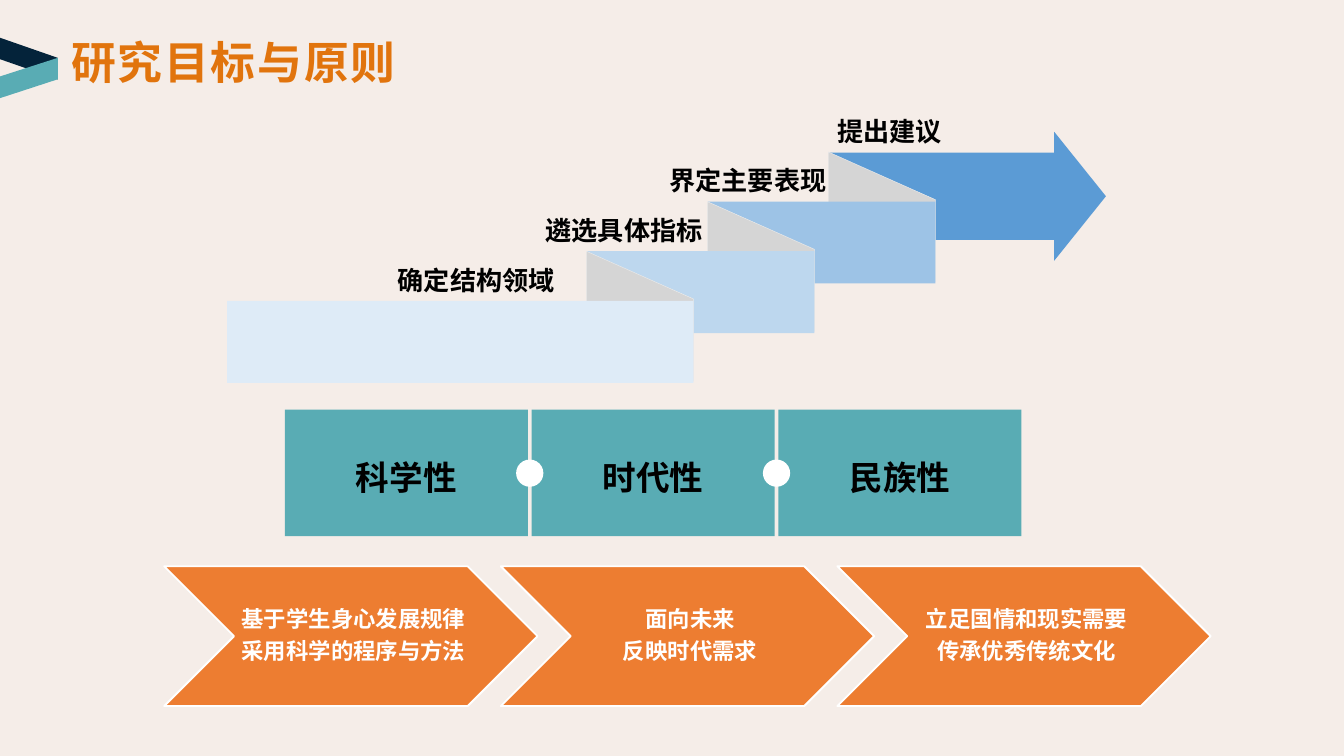
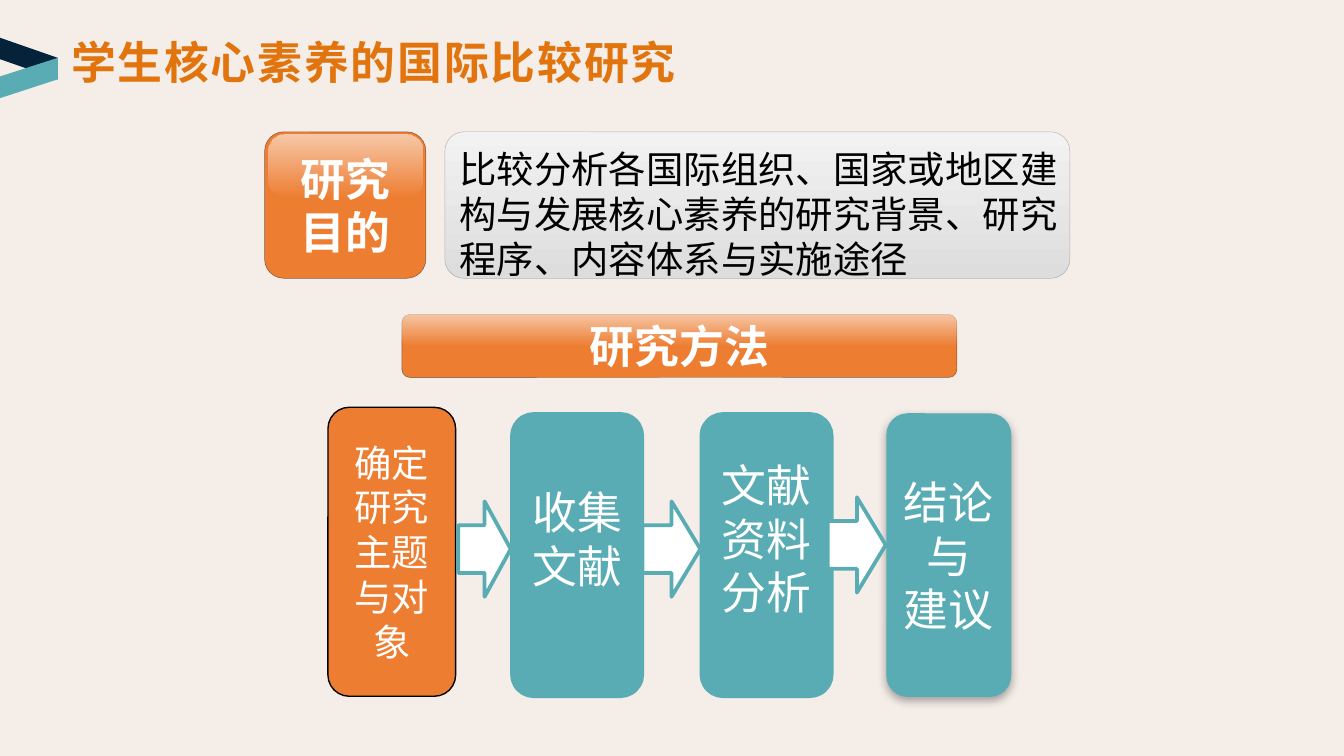
from lxml import etree
from pptx import Presentation
from pptx.dml.color import RGBColor
from pptx.enum.shapes import MSO_SHAPE as Kind
from pptx.enum.text import MSO_ANCHOR as Anchor, MSO_AUTO_SIZE as AutoSize, PP_ALIGN as Align
from pptx.oxml import parse_xml
from pptx.oxml.ns import nsdecls, qn
from pptx.util import Pt

CREAM = RGBColor(0xF5, 0xED, 0xE8)
WHITE = RGBColor(0xFF, 0xFF, 0xFF)
BLACK = RGBColor(0, 0, 0)
INK = RGBColor(0x1C, 0x1C, 0x1C)
NAVY = RGBColor(0x04, 0x23, 0x3A)
TEAL = RGBColor(0x59, 0xAC, 0xB4)
ORANGE = RGBColor(0xED, 0x7D, 0x31)
TITLE_ORANGE = RGBColor(0xE1, 0x74, 0x0D)
FOLD_GREY = RGBColor(0xD5, 0xD5, 0xD5)
FOLD_EDGE = RGBColor(0xEA, 0xEA, 0xEA)
PANEL_TOP = RGBColor(0xF2, 0xF2, 0xF2)
PANEL_BOTTOM = RGBColor(0xDD, 0xDD, 0xDD)
PANEL_EDGE = RGBColor(0x96, 0x96, 0x96)
ARROW_BLUE = RGBColor(0x5B, 0x9B, 0xD5)
STAIR_BLUES = [RGBColor(0x9D, 0xC3, 0xE6), RGBColor(0xBD, 0xD7, 0xEE), RGBColor(0xDE, 0xEB, 0xF7)]

FONT = "Noto Sans CJK SC"
LINE_HEIGHT = 1.2
INSETS = (7.2, 3.6, 7.2, 3.6)

# Title ribbon: colour and corners
RIBBON = [
    (NAVY, [(31, 42.5), (31, 31), (0, 20.2), (0, 31.7)]),
    (TEAL, [(31, 31), (31, 42.5), (0, 52.6), (0, 41)]),
]

# Goals page
GOALS_TITLE = "研究目标与原则"
STAIR_LABELS = [("提出建议", 448.6), ("界定主要表现", 358.6), ("遴选具体指标", 292.3), ("确定结构领域", 213.1)]
STAIR_WIDTHS = [121.7, 121.7, 249.8]
STAIR_DX, STAIR_DY = -64.8, 26.6
FOLD = [(0, 0), (57.4, 25.6), (57.4, 69.6), (0, 48.2)]
PRINCIPLES = [
    ("科学性", ["基于学生身心发展规律", "采用科学的程序与方法"]),
    ("时代性", ["面向未来", "反映时代需求"]),
    ("民族性", ["立足国情和现实需要", "传承优秀传统文化"]),
]

# Comparison page
COMPARE_TITLE = "学生核心素养的国际比较研究"
PURPOSE = ["研究", "目的"]
PURPOSE_TEXT = ["比较分析各国际组织、国家或地区建构与发展核心素养的研究背景、研究程序、内容体系与实施途径"]
METHOD = ["研究方法"]
# lines, frame, text size, fill, line, line width, bottom inset
STEPS = [
    (["确定", "研究", "主题", "与对", "象"], (175.7, 218.2, 68.4, 154.8), 20, ORANGE, BLACK, 0.75, 3.6),
    (["收集", "文献"], (274.3, 221.8, 69.8, 151.2), 24, TEAL, TEAL, 2, 21.6),
    (["文献", "资料", "分析"], (375.8, 221.8, 69.8, 151.2), 24, TEAL, TEAL, 2, 21.6),
    (["结论", "与", "建议"], (475.2, 221.8, 66.2, 151.2), 24, TEAL, TEAL, 0.75, 3.6),
]
STEP_ARROWS = [(245.5, 268.6, 28.1), (344.2, 268.6, 31), (443.5, 266.4, 31)]


def points(values):
    return [Pt(value) for value in values]


def set_opacity(element, percent):
    """Add opacity to every RGB colour below the given XML element."""
    for color in list(element.iter(qn("a:srgbClr"))):
        etree.SubElement(color, qn("a:alpha")).set("val", str(percent * 1000))


def write(shape, lines, size=12, color=BLACK, bold=False, font=FONT, align=Align.CENTER,
          anchor=Anchor.MIDDLE, insets=INSETS, wrap=True, leading=1.0, after=0,
          tracking=0, grow=False):
    frame = shape.text_frame
    frame.word_wrap = wrap
    frame.auto_size = AutoSize.SHAPE_TO_FIT_TEXT if grow else AutoSize.NONE
    frame.vertical_anchor = anchor
    (frame.margin_left, frame.margin_top,
     frame.margin_right, frame.margin_bottom) = points(insets)
    for index, line in enumerate(lines):
        para = frame.paragraphs[0] if index == 0 else frame.add_paragraph()
        para.alignment = align
        para.line_spacing = Pt(round(size * LINE_HEIGHT * leading, 2))
        para.space_after = Pt(after)
        span = para.add_run()
        span.text = line
        span.font.name = font
        span.font.size = Pt(size)
        span.font.bold = bold
        span.font.color.rgb = color
        props = span.font._element
        etree.SubElement(props, qn("a:ea")).set("typeface", FONT)
        if tracking:
            props.set("spc", str(tracking * 100))


def add_text(page, frame, lines, **style):
    box = page.shapes.add_textbox(*points(frame))
    write(box, lines, **style)


def paint(shape, fill, line=None, width=1.0):
    """Fill with one colour, or with a list of two as a downward gradient."""
    shape.shadow.inherit = False
    if isinstance(fill, list):
        shape.fill.gradient()
        shape.fill.gradient_angle = 270
        for place, (stop, color) in enumerate(zip(shape.fill.gradient_stops, fill)):
            stop.color.rgb = color
            stop.position = place
    else:
        shape.fill.solid()
        shape.fill.fore_color.rgb = fill
    if line is None:
        shape.line.fill.background()
    else:
        shape.line.color.rgb = line
        shape.line.width = Pt(width)


def add_block(page, kind, frame, fill, line=None, width=1.0, adjust=()):
    block = page.shapes.add_shape(kind, *points(frame))
    for index, value in enumerate(adjust):
        block.adjustments[index] = value
    paint(block, fill, line, width)
    return block


def add_outline(page, corners, fill, line=None, width=1.0):
    start, *rest = [tuple(points(corner)) for corner in corners]
    builder = page.shapes.build_freeform(*start, scale=1.0)
    builder.add_line_segments(rest, close=True)
    paint(builder.convert_to_shape(), fill, line, width)


def add_glossy(page, frame, lines, gloss):
    """Orange button with a white sheen over its upper part."""
    button = add_block(page, Kind.ROUNDED_RECTANGLE, frame, ORANGE, INK, 0.25, [0.131])
    set_opacity(button._element.spPr.find(qn("a:ln")), 57)
    write(button, lines, size=24, color=WHITE, bold=True)
    sheen = add_block(page, Kind.ROUNDED_RECTANGLE, gloss, [WHITE, WHITE], adjust=[0.256])
    sheen.rotation = 180
    for stop, percent in zip(sheen._element.iter(qn("a:gs")), (0, 59)):
        set_opacity(stop, percent)


def add_soft_shadow(shape):
    effects = shape._element.spPr.find(qn("a:effectLst"))
    effects.append(parse_xml(
        f'<a:outerShdw {nsdecls("a")} blurRad="{Pt(5)}" dist="{Pt(1.8)}" dir="5400000" '
        'rotWithShape="0"><a:srgbClr val="000000"><a:alpha val="33000"/></a:srgbClr>'
        '</a:outerShdw>'))


def add_page(deck):
    page = deck.slides.add_slide(deck.slide_layouts[6])
    page.background.fill.solid()
    page.background.fill.fore_color.rgb = CREAM
    return page


def add_header(page, title, width, font):
    for color, corners in RIBBON:
        add_outline(page, corners, color)
    add_text(page, (31, 15.1, width, 36), [title], size=24, color=TITLE_ORANGE, bold=True,
             font=font, align=Align.LEFT, anchor=Anchor.TOP, wrap=False, tracking=1, grow=True)


def add_stairs(page):
    add_block(page, Kind.RIGHT_ARROW, (444.2, 70.6, 148.3, 69.1), ARROW_BLUE, adjust=[0.677, 0.401])
    for index, (color, width) in enumerate(zip(STAIR_BLUES, STAIR_WIDTHS)):
        left, top = 443.7 + index * STAIR_DX, 81.4 + index * STAIR_DY
        add_outline(page, [(left + x, top + y) for x, y in FOLD], FOLD_GREY, FOLD_EDGE, 0.25)
        add_block(page, Kind.RECTANGLE, (left + 57.4 - width, top + STAIR_DY, width, 43.9), color)
    for index, (label, left) in enumerate(STAIR_LABELS):
        add_text(page, (left, 55.4 + index * STAIR_DY, 98, 25.9), [label], size=14, bold=True,
                 align=Align.LEFT, insets=(0, 0, 7.2, 0), leading=1.2)


def add_principles(page):
    pitch = 132.2
    for index, (name, lines) in enumerate(PRINCIPLES):
        chevron_left = 88 + index * 180.3
        add_block(page, Kind.CHEVRON, (chevron_left, 303.4, 200, 74.9), ORANGE, WHITE, 1)
        add_text(page, (chevron_left + 37.3, 303.4, 126, 74.9), lines, size=12, color=WHITE,
                 bold=True, insets=(3.6, 1.4, 1.4, 1.4), leading=0.9, after=4.2)
        tile = add_block(page, Kind.RECTANGLE, (152.6 + index * pitch, 219.4, 130.2, 67.9), TEAL)
        write(tile, [name], size=18, bold=True, leading=1.2)
    for index in range(len(PRINCIPLES) - 1):
        add_block(page, Kind.OVAL, (276.5 + index * pitch, 246.2, 14.6, 14.6), WHITE)


def add_steps(page):
    for lines, frame, size, fill, line, width, bottom in STEPS:
        step = add_block(page, Kind.ROUNDED_RECTANGLE, frame, fill, line, width, [0.167])
        write(step, lines, size=size, color=WHITE, wrap=False, insets=(7.2, 3.6, 7.2, bottom))
    add_soft_shadow(step)
    for left, top, width in STEP_ARROWS:
        add_block(page, Kind.RIGHT_ARROW, (left, top, width, 51.1), WHITE, TEAL, 2, [0.5, 0.498])


def build_goals(deck):
    page = add_page(deck)
    add_header(page, GOALS_TITLE, 191.5, "Times New Roman")
    add_stairs(page)
    add_principles(page)


def build_comparison(deck):
    page = add_page(deck)
    add_glossy(page, (141.8, 70.6, 86.4, 78.5), PURPOSE, (143.6, 72, 82.8, 33.1))
    panel = add_block(page, Kind.ROUNDED_RECTANGLE, (238.3, 70.6, 334.8, 78.5),
                      [PANEL_TOP, PANEL_BOTTOM], PANEL_EDGE, 0.25, [0.131])
    set_opacity(panel._element.spPr.find(qn("a:ln")), 66)
    add_text(page, (239, 74.9, 336.2, 79.9), PURPOSE_TEXT, size=20, align=Align.LEFT,
             anchor=Anchor.TOP, grow=True)
    add_glossy(page, (215.3, 168.5, 297.4, 33.8), METHOD, (215.3, 168.5, 297.4, 16.6))
    add_steps(page)
    add_header(page, COMPARE_TITLE, 342.7, "Arial")


def main():
    deck = Presentation()
    deck.slide_width, deck.slide_height = Pt(720), Pt(405)
    build_goals(deck)
    build_comparison(deck)
    deck.save("out.pptx")


if __name__ == "__main__":
    main()
